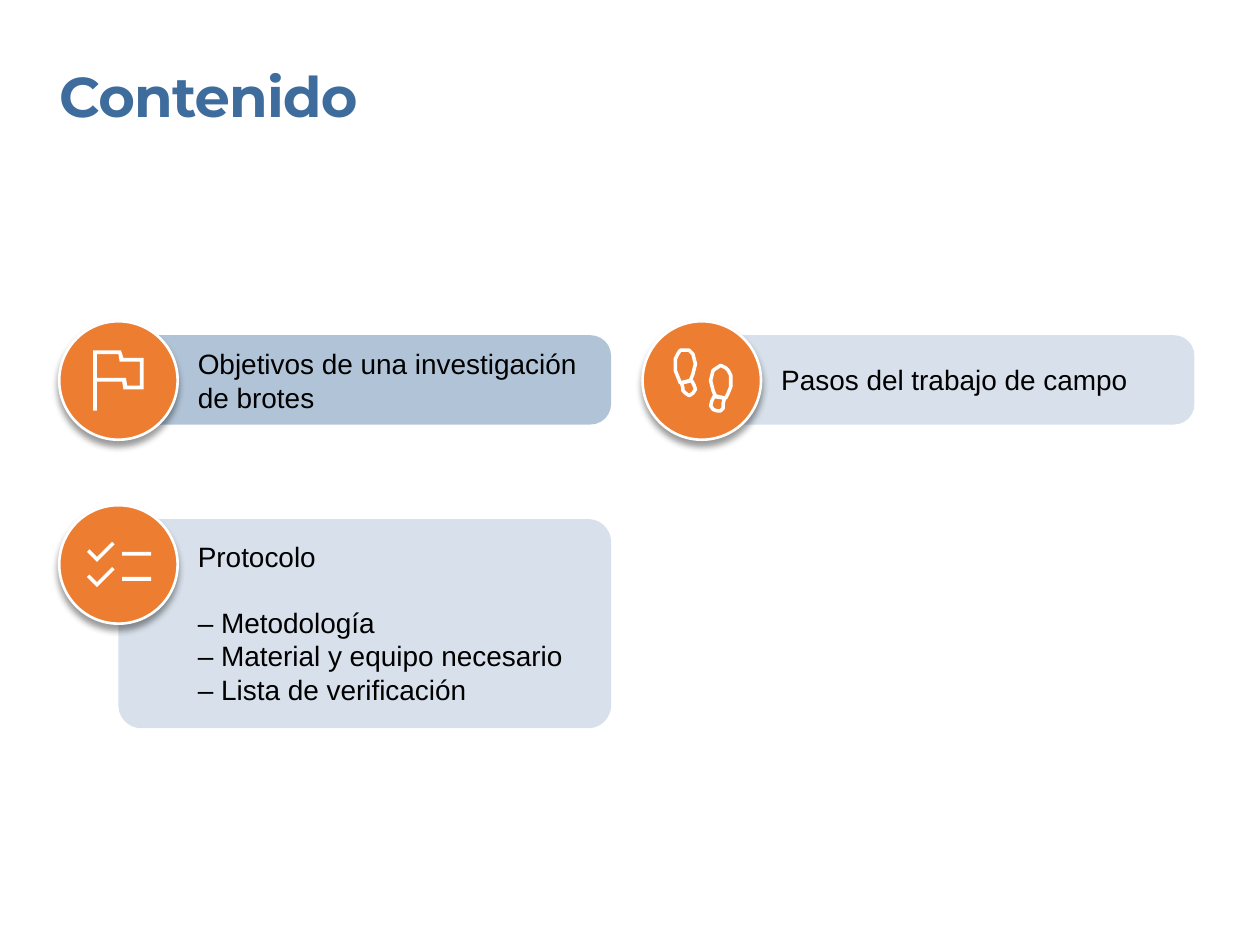
from lxml.etree import SubElement
from pptx import Presentation
from pptx.dml.color import RGBColor
from pptx.enum.shapes import MSO_SHAPE as Shape
from pptx.enum.text import MSO_ANCHOR, MSO_AUTO_SIZE, PP_ALIGN
from pptx.oxml import parse_xml
from pptx.oxml.ns import nsdecls, qn
from pptx.util import Inches, Pt

BLUE = RGBColor(0x3D, 0x6C, 0x9D)
ORANGE = RGBColor(0xED, 0x7D, 0x31)
WHITE = RGBColor(0xFF, 0xFF, 0xFF)
BLACK = RGBColor(0x00, 0x00, 0x00)

TITLE_FONT = {"name": "Montserrat", "size": Pt(32), "bold": True}
TEXT_FONT = {"name": "Arial", "size": Pt(16), "bold": False}
FRAME_FORMAT = {
    "margin_left": 0, "margin_top": 0, "margin_right": 0, "margin_bottom": 0,
    "word_wrap": True, "auto_size": MSO_AUTO_SIZE.NONE,
    "vertical_anchor": MSO_ANCHOR.TOP,
}
CIRCLE_SHADOW = (
    f'<a:effectLst {nsdecls("a")}><a:outerShdw blurRad="50800" dist="38100" dir="5400000">'
    '<a:srgbClr val="000000"><a:alpha val="40000"/></a:srgbClr></a:outerShdw></a:effectLst>'
)


def write_text(shape, box, lines, font_format, color):
    """Place a text shape and fill it with one plain paragraph per line."""
    shape.left, shape.top, shape.width, shape.height = map(Inches, box)
    frame = shape.text_frame
    frame.text = "\n".join(lines)
    for name, value in FRAME_FORMAT.items():
        setattr(frame, name, value)
    for paragraph in frame.paragraphs:
        paragraph.alignment = PP_ALIGN.LEFT
        paragraph.space_before = Pt(0)
        properties = paragraph._p.get_or_add_pPr()
        properties.set("marL", "0")
        properties.set("indent", "0")
        SubElement(properties, qn("a:buNone"))
        font = paragraph.runs[0].font
        font.color.rgb = color
        for name, value in font_format.items():
            setattr(font, name, value)


def draw_icon(contours):
    """Draw closed contours, given in hundredths of an inch, as one white shape."""
    builder = None
    for start, *points in contours:
        if builder is None:
            builder = slide.shapes.build_freeform(*start, scale=Inches(0.01))
        else:
            builder.move_to(*start)
        builder.add_line_segments(points, close=True)
    icon = builder.convert_to_shape()
    icon.shadow.inherit = False
    icon.fill.solid()
    icon.fill.fore_color.rgb = WHITE
    icon.line.fill.background()
    return icon


presentation = Presentation()
presentation.slide_width = Inches(10)
presentation.slide_height = Inches(7.5)
slide = presentation.slides.add_slide(presentation.slide_layouts[1])
title, protocol = slide.placeholders

# Cards: left and top of the circle, card height, corner, opacity in percent
cards = [
    (0.47, 2.55, 0.71, 0.231, 40),
    (5.1, 2.55, 0.71, 0.231, 20),
    (0.47, 4.01, 1.66, 0.11, 20),
]
for left, top, height, corner, opacity in cards:
    card = slide.shapes.add_shape(
        Shape.ROUNDED_RECTANGLE, Inches(left + 0.47), Inches(top + 0.11),
        Inches(3.91), Inches(height))
    card.adjustments[0] = corner
    card.shadow.inherit = False
    card.fill.solid()
    card.fill.fore_color.rgb = BLUE
    card_color = card.fill._xPr.find(qn("a:solidFill"))[0]
    SubElement(card_color, qn("a:alpha"), val=str(opacity * 1000))
    card.line.fill.background()
    # Cards lie behind the placeholders
    slide.shapes._spTree.insert(2, card._element)

    circle = slide.shapes.add_shape(
        Shape.OVAL, Inches(left), Inches(top), Inches(0.94), Inches(0.94))
    circle.fill.solid()
    circle.fill.fore_color.rgb = ORANGE
    circle.line.color.rgb = WHITE
    circle.line.width = Pt(1.5)
    circle._element.spPr.append(parse_xml(CIRCLE_SHADOW))

write_text(title, (0.47, 0.49, 8.55, 0.54), ["Contenido"], TITLE_FONT, BLUE)
title.text_frame.paragraphs[0].runs[0]._r.get_or_add_rPr().set("spc", "-50")

write_text(protocol, (1.57, 4.28, 3.01, 1.35),
           ["Protocolo", "– Metodología", "– Material y equipo necesario",
            "– Lista de verificación"], TEXT_FONT, BLACK)
protocol.text_frame.paragraphs[1].space_before = Pt(18.4)

labels = [
    ((1.57, 2.75, 3.01, 0.54), "Objetivos de una investigación de brotes"),
    ((6.2, 2.88, 2.92, 0.27), "Pasos del trabajo de campo"),
]
for box, label in labels:
    write_text(slide.shapes.add_textbox(0, 0, 0, 0), box, [label], TEXT_FONT, BLACK)

# Flag
draw_icon([
    [(74, 326), (74, 278), (96, 278), (98, 284), (114, 284), (114, 309),
     (98, 309), (97, 303), (77, 303), (77, 326)],
    [(101, 306), (111, 306), (111, 287), (95, 287), (94, 281), (77, 281),
     (77, 300), (100, 300)],
])

# Checklist: two rows, each a tick and a bar
tick = [(77, 446), (69, 438), (71, 436), (77, 442), (89, 430), (91, 432)]
bar = [(97, 441), (97, 438), (120, 438), (120, 441)]
draw_icon([[(x, y + row) for x, y in part] for row in (0, 20) for part in (tick, bar)])

# Footprints: the right one is the left one mirrored and moved down
sole = [(540, 303.5), (538, 299), (536.5, 294), (536, 289), (536.5, 285), (538, 281),
        (540.5, 278.5), (544, 277.5), (547, 278.5), (549.5, 281), (551, 285),
        (551.5, 289), (551, 293), (550, 297), (548, 302)]
heel = [(541, 303.5), (549, 301.5), (551, 305.5), (551.5, 309), (550.5, 312),
        (547, 313.5), (544.5, 312.5), (542.5, 310.5), (541.5, 307.5)]
mirror_sum = 1116
for part in (sole, heel):
    right_part = [(mirror_sum - x, y + 13) for x, y in part]
    for outline in (part, right_part):
        footprint = draw_icon([outline])
        footprint.fill.background()
        footprint.line.color.rgb = WHITE
        footprint.line.width = Pt(2)

presentation.save("out.pptx")
